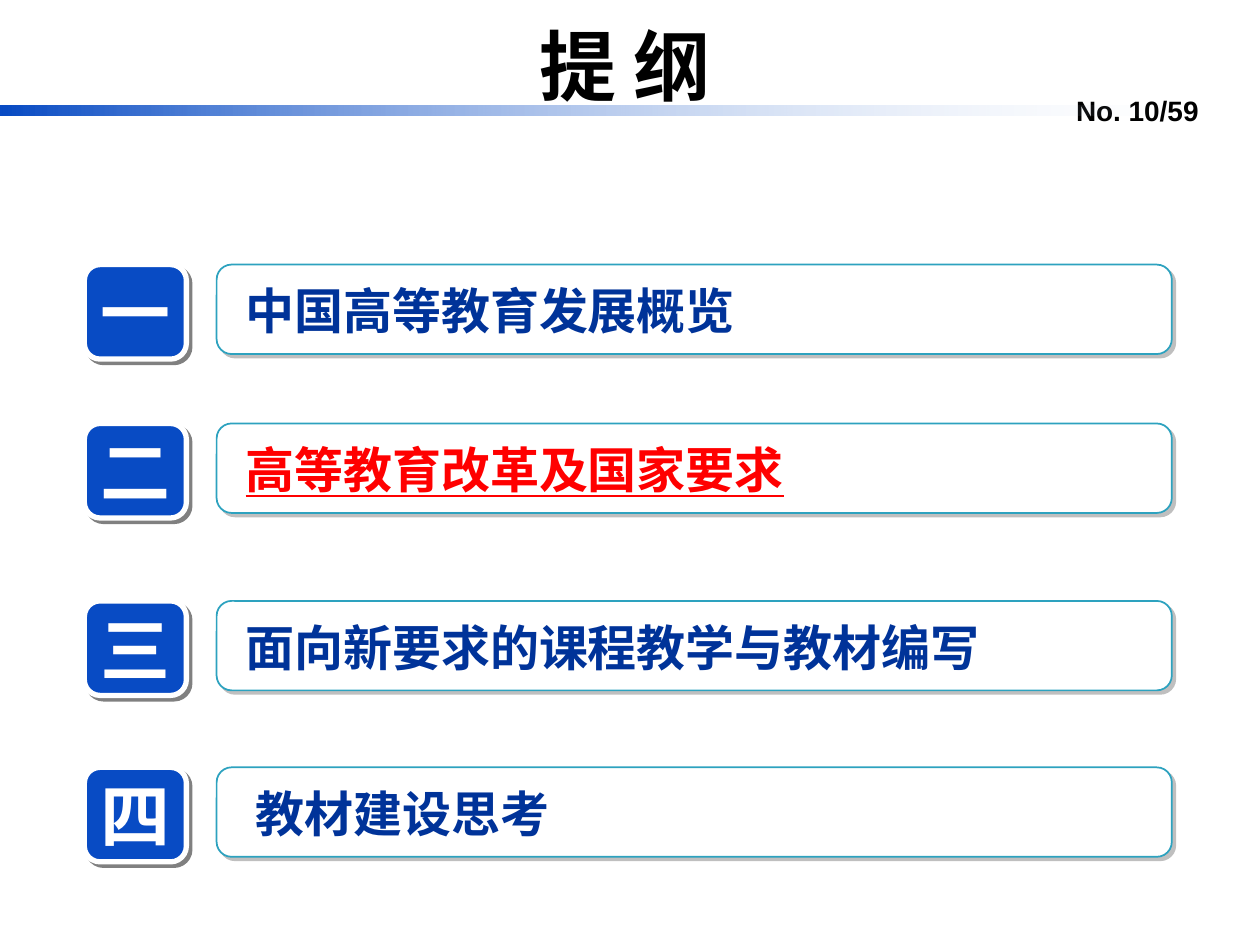
from lxml import etree
from pptx import Presentation, util as u
from pptx.dml.color import RGBColor
from pptx.enum import shapes, text
from pptx.oxml.ns import qn

BLUE = RGBColor(0x08, 0x4B, 0xC4)
PALE_BLUE = RGBColor(0xD2, 0xDF, 0xF4)
TEAL = RGBColor(0x2D, 0xA2, 0xBF)
NAVY = RGBColor(0x00, 0x33, 0x99)
RED = RGBColor(0xFF, 0x00, 0x00)
BLACK = RGBColor(0x00, 0x00, 0x00)
WHITE = RGBColor(0xFF, 0xFF, 0xFF)
GRAY = RGBColor(0x80, 0x80, 0x80)
LATIN_FONT = "Arial"
CHINESE_FONT = "Noto Sans CJK SC"
LEFT, CENTER, RIGHT = text.PP_ALIGN.LEFT, text.PP_ALIGN.CENTER, text.PP_ALIGN.RIGHT

# numeral, heading, row top, heading left, heading colour
TOPICS = [
    ("一", "中国高等教育发展概览", 151.2, 133.2, NAVY),
    ("二", "高等教育改革及国家要求", 242, 133.2, RED),
    ("三", "面向新要求的课程教学与教材编写", 343.4, 133.2, NAVY),
    ("四", "教材建设思考", 438.5, 139, NAVY),
]


class OutlineSlide:
    def __init__(self, slide):
        self.slide = slide

    def set_text(self, shape, words, size, color, font=CHINESE_FONT, align=LEFT):
        shape.text_frame.text = words
        paragraph = shape.text_frame.paragraphs[0]
        paragraph.alignment = align
        run = paragraph.runs[0]
        run.font.size = u.Pt(size)
        run.font.bold = True
        run.font.name = font
        run.font.color.rgb = color
        east_asian = etree.SubElement(run.font._element, qn("a:ea"))
        east_asian.set("typeface", CHINESE_FONT)
        return paragraph

    def title(self, words, left, top, width, height):
        title = self.slide.shapes.title
        title.left, title.top = u.Pt(left), u.Pt(top)
        title.width, title.height = u.Pt(width), u.Pt(height)
        paragraph = self.set_text(title, words, 44, BLACK, align=CENTER)
        paragraph.line_spacing = 1.5
        paragraph.space_before = u.Pt(9)
        title.text_frame.auto_size = text.MSO_AUTO_SIZE.NONE
        title.text_frame.vertical_anchor = text.MSO_ANCHOR.TOP

    def label(self, words, left, top, width, height, size, color, wrap=False, **style):
        box = self.slide.shapes.add_textbox(u.Pt(left), u.Pt(top), u.Pt(width), u.Pt(height))
        box.text_frame.word_wrap = wrap
        return self.set_text(box, words, size, color, **style)

    def shape(self, kind, left, top, width, height):
        shape = self.slide.shapes.add_shape(
            kind, u.Pt(left), u.Pt(top), u.Pt(width), u.Pt(height))
        shape.shadow.inherit = False
        return shape

    def fading_bar(self, left, top, width, height):
        bar = self.shape(shapes.MSO_SHAPE.RECTANGLE, left, top, width, height)
        bar.line.fill.background()
        bar.fill.gradient()
        bar.fill.gradient_angle = 0
        for stop, color in zip(bar.fill.gradient_stops, (BLUE, PALE_BLUE)):
            stop.color.rgb = color
        end_color = list(bar._element.spPr.iter(qn("a:srgbClr")))[-1]
        etree.SubElement(end_color, qn("a:alpha")).set("val", "0")

    def card(self, left, top, width, height, fill, line, line_width, shadow_opacity):
        """Rounded box with a hard shadow to the lower right."""
        card = self.shape(shapes.MSO_SHAPE.ROUNDED_RECTANGLE, left, top, width, height)
        card.fill.solid()
        card.fill.fore_color.rgb = fill
        card.line.color.rgb = line
        card.line.width = u.Pt(line_width)
        effects = card._element.spPr.find(qn("a:effectLst"))
        shadow = etree.SubElement(effects, qn("a:outerShdw"), blurRad="0",
                                  dist=str(int(u.Pt(2.8))), dir=str(45 * 60000),
                                  algn="ctr", rotWithShape="0")
        color = etree.SubElement(shadow, qn("a:srgbClr"), val=str(GRAY))
        etree.SubElement(color, qn("a:alpha"), val=str(shadow_opacity * 1000))
        return card

    def topic(self, numeral, heading, top, heading_left, color):
        self.card(123.8, top, 545.8, 51.1, WHITE, TEAL, 1, 50)
        badge = self.card(48.2, top, 58.3, 54, BLUE, WHITE, 3, 100)
        self.set_text(badge, numeral, 40, WHITE, font=LATIN_FONT, align=CENTER)
        badge.text_frame.word_wrap = False
        badge.text_frame.vertical_anchor = text.MSO_ANCHOR.MIDDLE
        paragraph = self.label(heading, heading_left, top + 5.8,
                               28 * len(heading) + 18, 41, 28, color)
        paragraph.runs[0].font.underline = color == RED


def main():
    presentation = Presentation()
    presentation.slide_width, presentation.slide_height = u.Pt(720), u.Pt(540)
    slide = presentation.slides.add_slide(presentation.slide_layouts[5])
    outline = OutlineSlide(slide)
    outline.label("No. 10/59", 524, 50, 168, 26, 16, BLACK,
                  wrap=True, font=LATIN_FONT, align=RIGHT)
    outline.title("提 纲", 139, -19.4, 436.3, 87.1)
    outline.fading_bar(0, 60.5, 672, 5.8)
    for topic in TOPICS:
        outline.topic(*topic)
    presentation.save("out.pptx")


if __name__ == "__main__":
    main()
